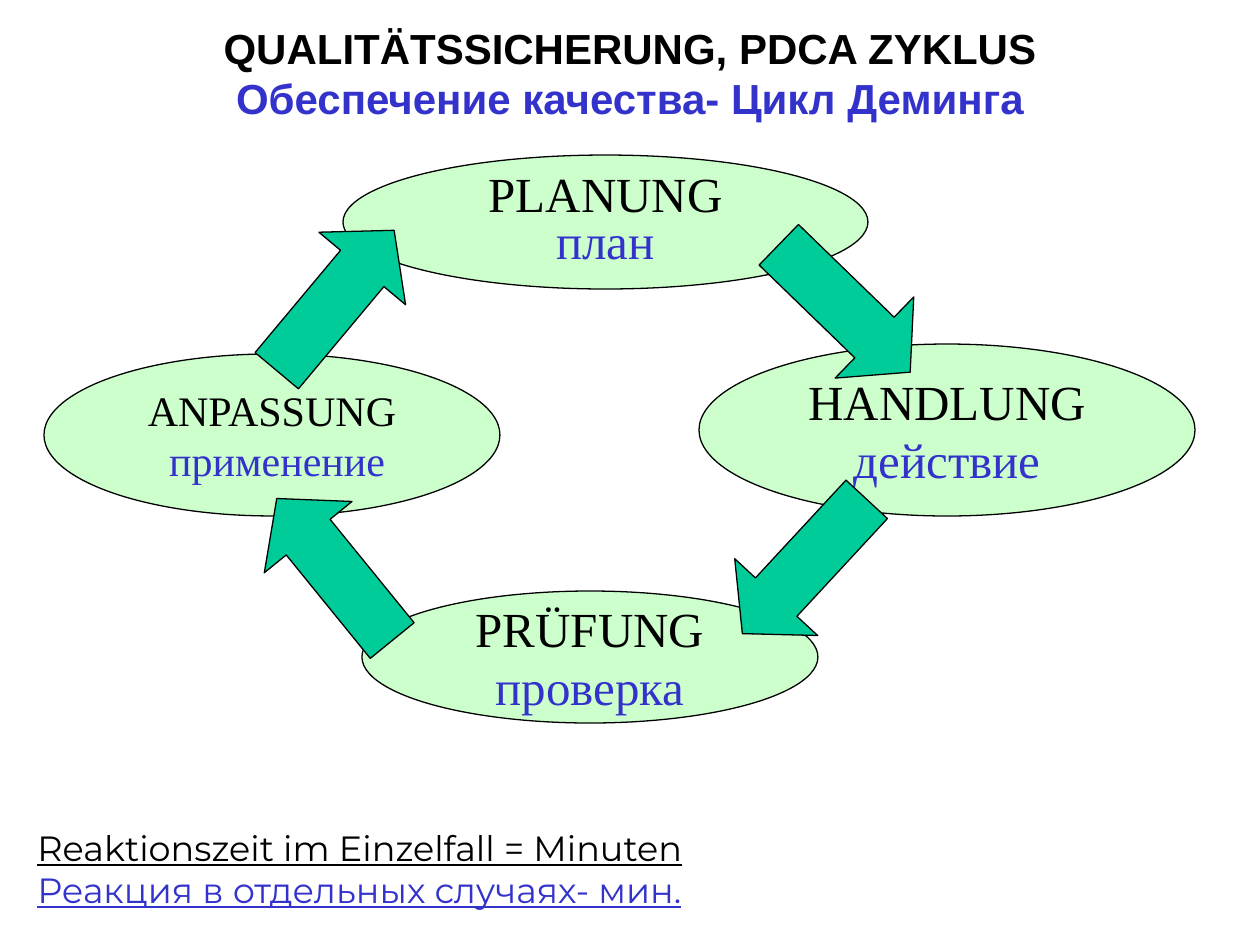
from pptx import Presentation
from pptx.dml.color import RGBColor
from pptx.enum.shapes import MSO_SHAPE
from pptx.enum.text import MSO_ANCHOR, PP_ALIGN
from pptx.util import Pt

PX = 914400 / 126
COLORS = {"german": "000000", "russian": "3333CC", "outline": "000000",
          "stage": "CCFFCC", "arrow": "00CC99", "page": "FFFFFF"}
STAGES = [
    ((343, 155, 525, 134), ("PLANUNG",), ("план",), 28, 0.8),
    ((699, 344, 496, 172), ("HANDLUNG",), ("действие",), 28, None),
    ((362, 591, 456, 132), ("PRÜFUNG",), ("проверка",), 28, None),
    ((44, 354, 456, 162), ("ANPASSUNG",), (" ", "применение"), 24, None),
]
ARROW_SIZE = (183, 113)
ARROWS = [((753, 252), 44.1), ((713, 510), 132.8),
          ((243, 513), 230.9), ((244, 244), 309.9)]


def emu(box):
    """Turn pixel lengths into EMU."""
    return [round(length * PX) for length in box]


def color(name):
    """Look up a named colour."""
    return RGBColor.from_string(COLORS[name])


def add_span(para, text, language, font, size, bold=False, underline=False):
    """Append one styled run to a paragraph."""
    span = para.add_run()
    span.text = text
    span.font.name = font
    span.font.size = Pt(size)
    span.font.bold = bold
    span.font.underline = underline
    span.font.color.rgb = color(language)


def add_outlined(page, preset, box, fill):
    """Add a filled preset shape with a thin outline."""
    shape = page.shapes.add_shape(preset, *emu(box))
    shape.shadow.inherit = False
    shape.fill.solid()
    shape.fill.fore_color.rgb = color(fill)
    shape.line.color.rgb = color("outline")
    shape.line.width = Pt(0.75)
    return shape


def add_title(page, box):
    """Place the bilingual title, one language per line."""
    frame = page.shapes.add_textbox(*emu(box)).text_frame
    frame.word_wrap = True
    frame.vertical_anchor = MSO_ANCHOR.MIDDLE
    para = frame.paragraphs[0]
    para.alignment = PP_ALIGN.CENTER
    add_span(para, "QUALITÄTSSICHERUNG, PDCA ZYKLUS", "german", "Arial", 24, bold=True)
    para.add_line_break()
    add_span(para, "Обеспечение качества- Цикл Деминга", "russian", "Arial", 24, bold=True)


def add_stage(page, box, german, russian, size, spacing):
    """Place one ellipse of the cycle with its two labels."""
    frame = add_outlined(page, MSO_SHAPE.OVAL, box, "stage").text_frame
    frame.word_wrap = False
    frame.vertical_anchor = MSO_ANCHOR.MIDDLE
    paras = (frame.paragraphs[0], frame.add_paragraph())
    for para, texts, language in zip(paras, (german, russian), ("german", "russian")):
        para.alignment = PP_ALIGN.CENTER
        para.line_spacing = spacing
        for text in texts:
            add_span(para, text, language, "Times New Roman", size)


def add_cycle(page, box):
    """Place the four stages and the arrows between them inside the box."""
    left, top = box[:2]
    for (x, y, width, height), *labels in STAGES:
        add_stage(page, (left + x, top + y, width, height), *labels)
    for (x, y), angle in ARROWS:
        arrow = add_outlined(page, MSO_SHAPE.RIGHT_ARROW,
                             (left + x, top + y, *ARROW_SIZE), "arrow")
        arrow.adjustments[0] = 0.5
        arrow.adjustments[1] = 0.44
        arrow.rotation = angle


def add_reaction_note(page, box):
    """Place the underlined note on reaction time."""
    frame = page.shapes.add_textbox(*emu(box)).text_frame
    frame.word_wrap = False
    add_span(frame.paragraphs[0], "Reaktionszeit im Einzelfall = Minuten",
             "german", "Montserrat", 20, underline=True)
    add_span(frame.add_paragraph(), "Реакция в отдельных случаях- мин.",
             "russian", "Montserrat", 20, underline=True)


def main():
    """Build and save the deck."""
    deck = Presentation()
    deck.slide_width, deck.slide_height = emu((1260, 945))
    page = deck.slides.add_slide(deck.slide_layouts[6])
    page.background.fill.solid()
    page.background.fill.fore_color.rgb = color("page")
    add_title(page, (0, 15, 1260, 115))
    add_cycle(page, (0, 0, 1260, 945))
    add_reaction_note(page, (25, 820, 738, 97))
    deck.save("out.pptx")


if __name__ == "__main__":
    main()
